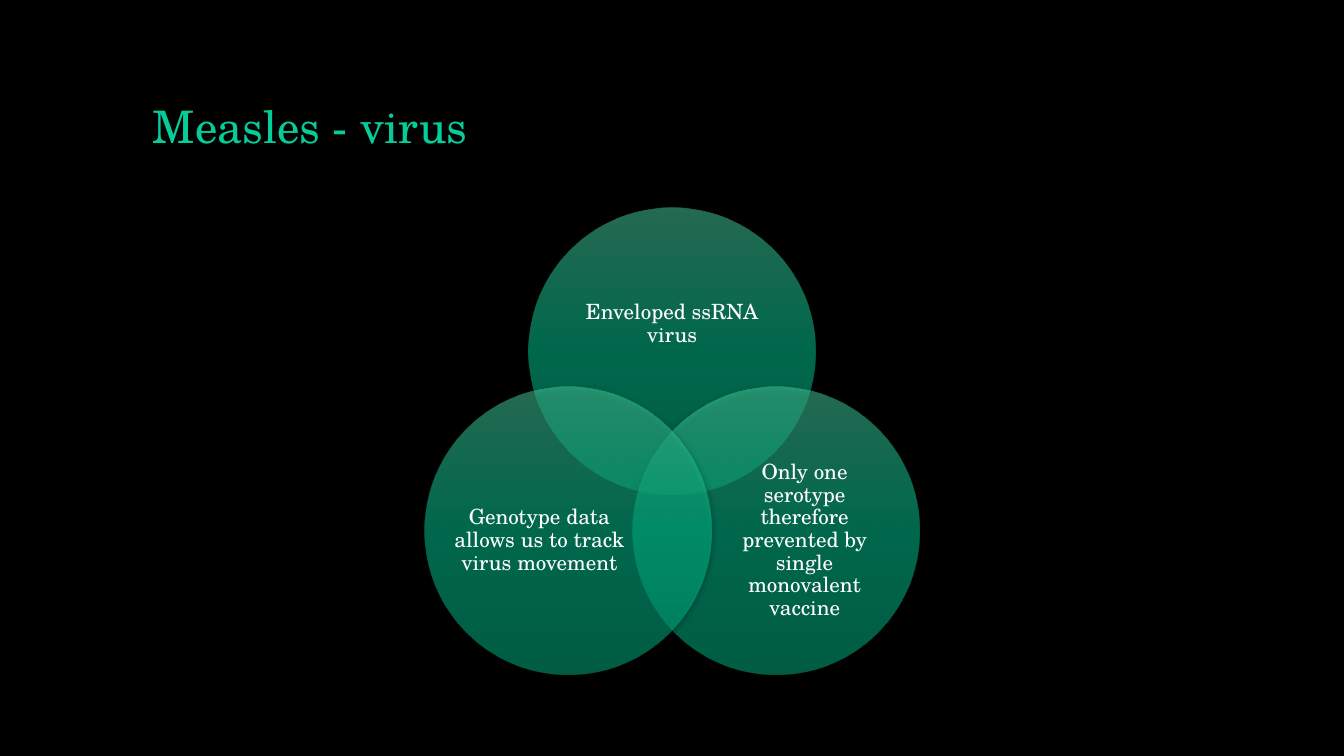
from lxml import etree
from pptx import Presentation
from pptx.dml.color import RGBColor
from pptx.enum.shapes import MSO_SHAPE
from pptx.enum.text import MSO_ANCHOR, MSO_AUTO_SIZE, PP_ALIGN
from pptx.oxml import parse_xml
from pptx.oxml.ns import nsdecls, qn
from pptx.util import Pt

BLACK = RGBColor(0x00, 0x00, 0x00)
WHITE = RGBColor(0xFF, 0xFF, 0xFF)
TITLE_GREEN = RGBColor(0x07, 0xCB, 0x98)
GRADIENT = [
    (0, RGBColor(0x4B, 0xD5, 0xA5)),
    (50, RGBColor(0x00, 0xD2, 0x9B)),
    (100, RGBColor(0x00, 0xBB, 0x8A)),
]
FONT = "TeX Gyre Schola"
OVAL = MSO_SHAPE.OVAL
LEFT, CENTER = PP_ALIGN.LEFT, PP_ALIGN.CENTER
BOTTOM, MIDDLE = MSO_ANCHOR.BOTTOM, MSO_ANCHOR.MIDDLE
NO_AUTOFIT = MSO_AUTO_SIZE.NONE
TITLE_ONLY = 5

DIAMETER = 205.2
VENN_X, VENN_TOP = 480, 148.3
STEP_X, STEP_Y = 74.2, 128.2

# Text, circle position in steps, label box as fractions of the diameter
CIRCLES = [
    ("Enveloped ssRNA virus", (0, 0), (0.13, 0.18, 0.74, 0.45)),
    ("Only one serotype therefore prevented by single monovalent vaccine",
     (1, 1), (0.3, 0.26, 0.6, 0.55)),
    ("Genotype data allows us to track virus movement",
     (-1, 1), (0.1, 0.26, 0.6, 0.55)),
]


class VennSlide:
    def __init__(self, presentation):
        self.slide = presentation.slides.add_slide(presentation.slide_layouts[TITLE_ONLY])
        fill = self.slide.background.fill
        fill.solid()
        fill.fore_color.rgb = BLACK

    def set_text(self, text_frame, text, size, color, align, anchor):
        text_frame.text = text
        text_frame.word_wrap = True
        text_frame.auto_size = NO_AUTOFIT
        text_frame.vertical_anchor = anchor
        paragraph = text_frame.paragraphs[0]
        paragraph.alignment = align
        paragraph.line_spacing = 0.9
        font = paragraph.runs[0].font
        font.name = FONT
        font.size = Pt(size)
        font.color.rgb = color

    def title(self, text, left, top, width, height):
        title = self.slide.shapes.title
        title.left, title.top = Pt(left), Pt(top)
        title.width, title.height = Pt(width), Pt(height)
        self.set_text(title.text_frame, text, 32, TITLE_GREEN, LEFT, BOTTOM)

    def circle(self, left, top):
        """Draw a half-transparent gradient circle with a soft shadow."""
        shape = self.slide.shapes.add_shape(
            OVAL, Pt(left), Pt(top), Pt(DIAMETER), Pt(DIAMETER))
        shape.line.fill.background()
        shape.fill.gradient()
        shape.fill.gradient_angle = 270
        stops = shape.element.spPr.find(qn("a:gradFill")).find(qn("a:gsLst"))
        for stop in list(stops):
            stops.remove(stop)
        for position, color in GRADIENT:
            stop = etree.SubElement(stops, qn("a:gs"), pos=str(position * 1000))
            rgb = etree.SubElement(stop, qn("a:srgbClr"), val=str(color))
            etree.SubElement(rgb, qn("a:alpha"), val="50000")
        shape.shadow.inherit = False
        shape.element.spPr.find(qn("a:effectLst")).append(parse_xml(
            f'<a:outerShdw {nsdecls("a")} blurRad="{Pt(4.5)}" dist="{Pt(1.5)}" '
            f'dir="5400000" rotWithShape="0"><a:srgbClr val="{BLACK}">'
            '<a:alpha val="63000"/></a:srgbClr></a:outerShdw>'))

    def label(self, text, left, top, width, height):
        box = self.slide.shapes.add_textbox(Pt(left), Pt(top), Pt(width), Pt(height))
        frame = box.text_frame
        frame.margin_left = frame.margin_right = 0
        frame.margin_top = frame.margin_bottom = 0
        self.set_text(frame, text, 15, WHITE, CENTER, MIDDLE)
        frame.paragraphs[0].space_after = Pt(5.25)


def main():
    presentation = Presentation()
    presentation.slide_width, presentation.slide_height = Pt(960), Pt(540)
    venn = VennSlide(presentation)
    venn.title("Measles - virus", 102, 28.8, 756, 84)
    for text, (column, row), (x, y, width, height) in CIRCLES:
        left = VENN_X + column * STEP_X - DIAMETER / 2
        top = VENN_TOP + row * STEP_Y
        venn.circle(left, top)
        venn.label(text, left + x * DIAMETER, top + y * DIAMETER,
                   width * DIAMETER, height * DIAMETER)
    presentation.save("out.pptx")


if __name__ == "__main__":
    main()
